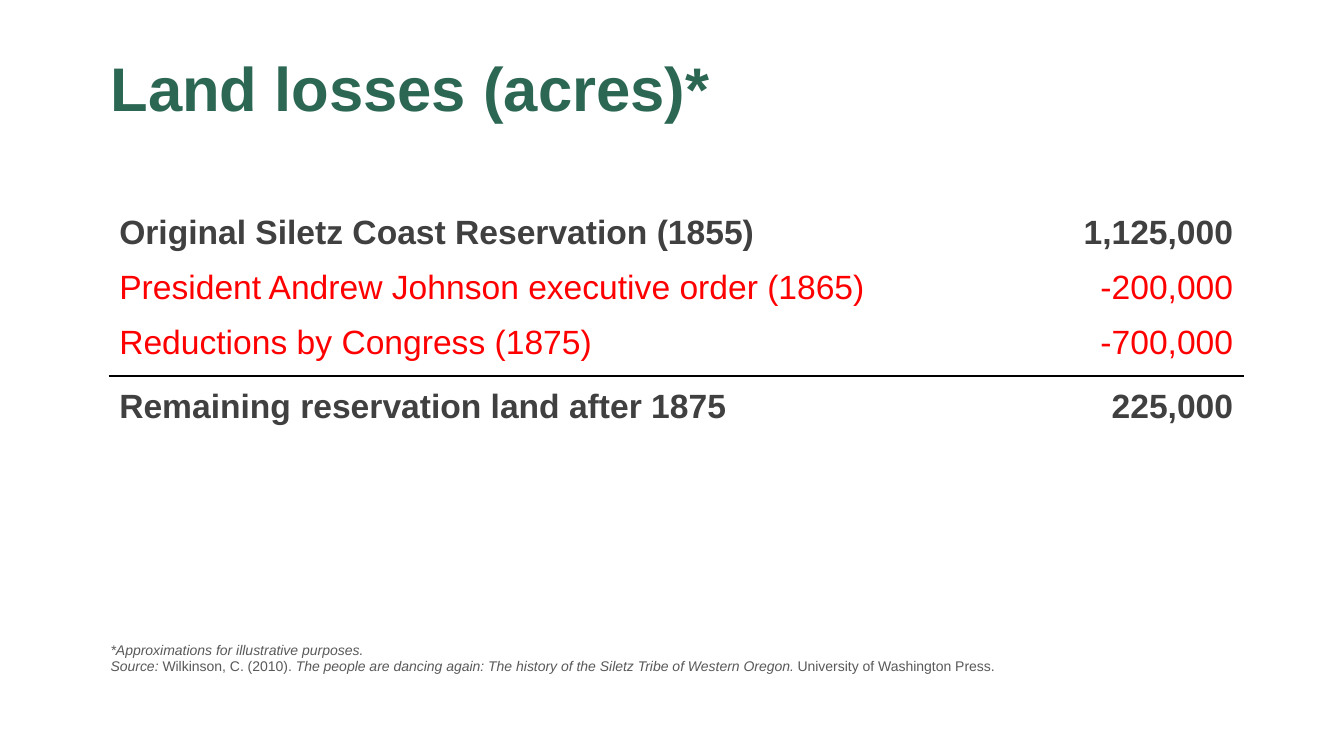
from lxml.etree import SubElement
from pptx import Presentation
from pptx.dml.color import RGBColor
from pptx.enum.text import MSO_ANCHOR as Anchor, PP_ALIGN as Align
from pptx.oxml.ns import qn
from pptx.util import Pt

GREEN, DARK, GREY, RED, BLACK = "2C6754", "404040", "595959", "FF0000", "000000"
TOTAL = {"bold": True, "color": DARK}
LOSS = {"bold": False, "color": RED}
LAND_ROWS = [
    ("Original Siletz Coast Reservation (1855)", "1,125,000", TOTAL),
    ("President Andrew Johnson executive order (1865)", "-200,000", LOSS),
    ("Reductions by Congress (1875)", "-700,000", LOSS),
    ("Remaining reservation land after 1875", "225,000", TOTAL),
]
COLUMN_WIDTHS = (625, 185)
ROW_HEIGHTS = (29.5, 29.5, 46, 29.5)
LAST_LOSS_ROW = 2
FOOTNOTES = [
    [("*Approximations for illustrative purposes.", True)],
    [
        ("Source: ", True),
        ("Wilkinson, C. (2010). ", False),
        ("The people are dancing again: The history of the Siletz Tribe of Western Oregon. ", True),
        ("University of Washington Press.", False),
    ],
]


def rgb(value):
    return RGBColor.from_string(value)


class SlideBuilder:
    font_name = "Arial"

    def __init__(self, slide):
        self.slide = slide

    def format_font(self, font, color, size, **values):
        values.update(name=self.font_name, size=Pt(size))
        for name, value in values.items():
            setattr(font, name, value)
        font.color.rgb = rgb(color)

    def format_frame(self, frame, anchor):
        values = {"word_wrap": True, "vertical_anchor": anchor}
        for side in ("left", "top", "right", "bottom"):
            values[f"margin_{side}"] = 0
        for name, value in values.items():
            setattr(frame, name, value)

    def add_title(self, text, left, top, width, height):
        title = self.slide.shapes.title
        bounds = {"left": left, "top": top, "width": width, "height": height}
        for name, value in bounds.items():
            setattr(title, name, Pt(value))
        self.format_frame(title.text_frame, Anchor.BOTTOM)
        paragraph = title.text_frame.paragraphs[0]
        paragraph.alignment, paragraph.line_spacing = Align.LEFT, 0.9
        run = paragraph.add_run()
        run.text = text
        self.format_font(run.font, GREEN, 44, bold=True)

    def add_cell_border(self, cell, tag, color):
        """Draw one side of a cell; call before the cell is filled."""
        line = SubElement(cell._tc.get_or_add_tcPr(), qn(tag), w=str(Pt(1)))
        fill = SubElement(line, qn("a:solidFill"))
        SubElement(fill, qn("a:srgbClr"), val=color)

    def fill_cell(self, cell, text, alignment, style):
        cell.fill.background()
        paragraph = cell.text_frame.paragraphs[0]
        paragraph.alignment, paragraph.line_spacing = alignment, 1.2
        run = paragraph.add_run()
        run.text = text
        self.format_font(run.font, size=24, **style)

    def add_land_table(self, left, top, height):
        table = self.slide.shapes.add_table(
            len(LAND_ROWS), len(COLUMN_WIDTHS),
            Pt(left), Pt(top), Pt(sum(COLUMN_WIDTHS)), Pt(height),
        ).table
        table.first_row = table.horz_banding = False
        for column, width in zip(table.columns, COLUMN_WIDTHS):
            column.width = Pt(width)
        borders = {LAST_LOSS_ROW: "a:lnB", LAST_LOSS_ROW + 1: "a:lnT"}
        for index, (label, acres, style) in enumerate(LAND_ROWS):
            table.rows[index].height = Pt(ROW_HEIGHTS[index])
            cells = ((label, Align.LEFT), (acres, Align.RIGHT))
            for column, (text, alignment) in enumerate(cells):
                cell = table.cell(index, column)
                if index in borders:
                    self.add_cell_border(cell, borders[index], BLACK)
                self.fill_cell(cell, text, alignment, style)

    def add_footnotes(self, left, top, width, height):
        box = self.slide.shapes.add_textbox(Pt(left), Pt(top), Pt(width), Pt(height))
        frame = box.text_frame
        self.format_frame(frame, Anchor.TOP)
        for index, parts in enumerate(FOOTNOTES):
            paragraph = frame.add_paragraph() if index else frame.paragraphs[0]
            for text, italic in parts:
                run = paragraph.add_run()
                run.text = text
                self.format_font(run.font, GREY, 10, italic=italic)


def main():
    presentation = Presentation()
    presentation.slide_width, presentation.slide_height = Pt(960), Pt(540)
    title_only = presentation.slide_layouts[5]
    builder = SlideBuilder(presentation.slides.add_slide(title_only))
    builder.add_title("Land losses (acres)*", 79, 39, 799, 50)
    builder.add_land_table(78, 144, 162)
    builder.add_footnotes(79, 458, 803, 11.5)
    presentation.save("out.pptx")


if __name__ == "__main__":
    main()
